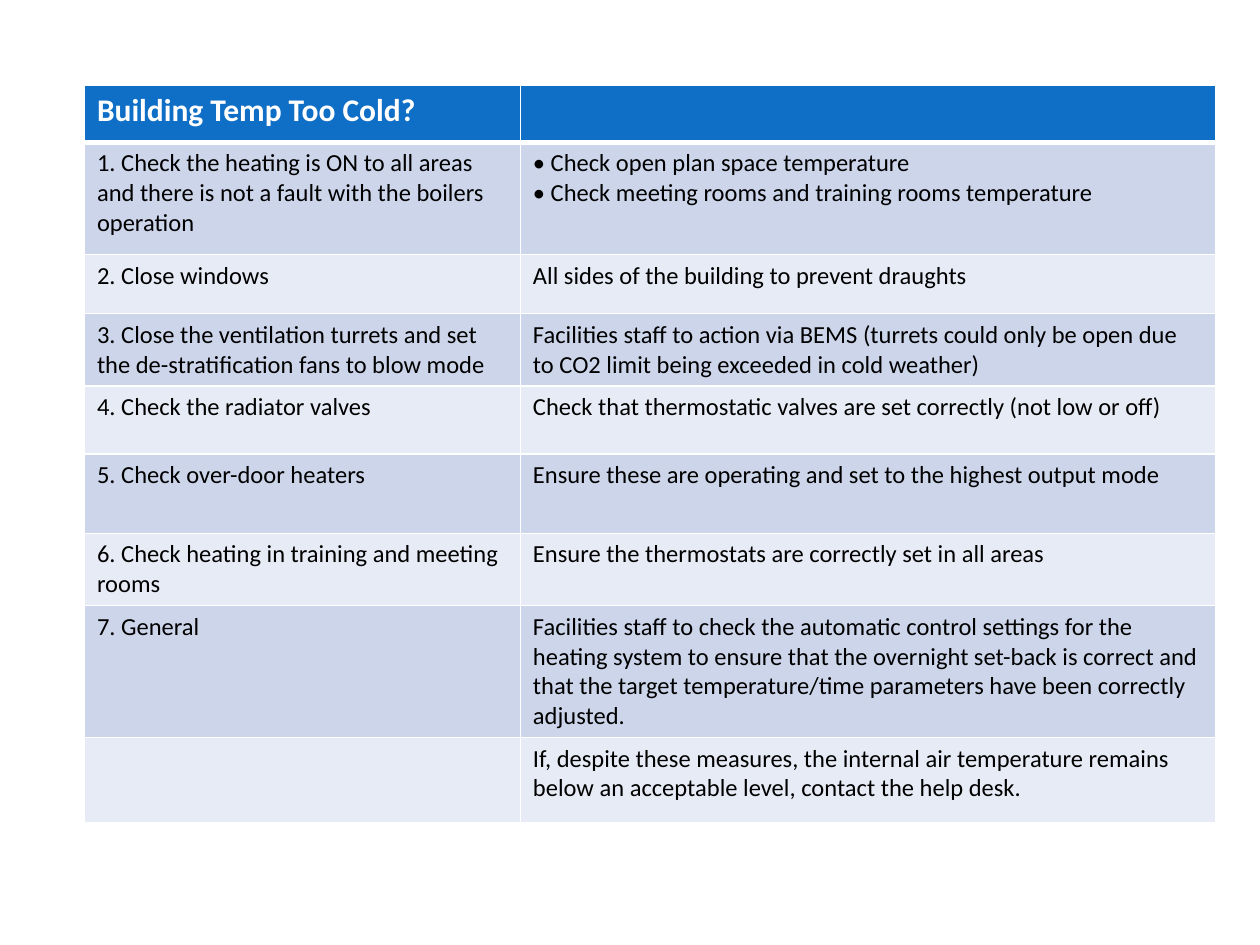
from pptx import Presentation
from pptx.dml.color import RGBColor
from pptx.oxml import parse_xml
from pptx.oxml.ns import nsdecls
from pptx.util import Inches, Pt

COLORS = {"header": "0F6FC6", "odd": "CCD5EA", "even": "E7EBF5",
          "white": "FFFFFF", "black": "000000"}
COLUMN_WIDTHS = [3.46, 5.52]
ROW_HEIGHTS = [0.45, 0.89, 0.47, 0.55, 0.54, 0.63, 0.4, 0.4, 0.68]
ROWS = [
    ("Building Temp Too Cold?", ""),
    ("1. Check the heating is ON to all areas and there is not a fault with the boilers operation",
     "• Check open plan space temperature\n• Check meeting rooms and training rooms temperature"),
    ("2. Close windows", "All sides of the building to prevent draughts"),
    ("3. Close the ventilation turrets and set the de-stratification fans to blow mode",
     "Facilities staff to action via BEMS (turrets could only be open due to CO2 limit "
     "being exceeded in cold weather)"),
    ("4. Check the radiator valves",
     "Check that thermostatic valves are set correctly (not low or off)"),
    ("5. Check over-door heaters",
     "Ensure these are operating and set to the highest output mode"),
    ("6. Check heating in training and meeting rooms",
     "Ensure the thermostats are correctly set in all areas"),
    ("7. General",
     "Facilities staff to check the automatic control settings for the heating system to ensure "
     "that the overnight set-back is correct and that the target temperature/time parameters "
     "have been correctly adjusted."),
    ("", "If, despite these measures, the internal air temperature remains below an acceptable "
         "level, contact the help desk."),
]


def write_text(text_frame, text, size=14, color="black", bold=False, font="Calibri"):
    text_frame.text = text
    for paragraph in text_frame.paragraphs:
        paragraph.font.size = Pt(size)
        for run in paragraph.runs:
            run.font.name = font
            run.font.size = Pt(size)
            run.font.bold = bold
            run.font.color.rgb = RGBColor.from_string(COLORS[color])


class SlideBuilder:
    """Hold the table style and the current slide."""

    def __init__(self, slide, border_width=1, header_border_width=3):
        self.slide = slide
        self.border_width = border_width
        self.header_border_width = header_border_width

    def add_borders(self, cell, row_index):
        properties = cell._tc.get_or_add_tcPr()
        for side in "LRTB":
            under_header = (row_index, side) in ((0, "B"), (1, "T"))
            width = self.header_border_width if under_header else self.border_width
            properties.append(parse_xml(
                f'<a:ln{side} {nsdecls("a")} w="{Pt(width)}"><a:solidFill>'
                f'<a:srgbClr val="{COLORS["white"]}"/></a:solidFill></a:ln{side}>'))

    def add_table(self, rows, left, top, column_widths, row_heights):
        table = self.slide.shapes.add_table(
            len(rows), len(column_widths), Inches(left), Inches(top),
            Inches(sum(column_widths)), Inches(sum(row_heights))).table
        for column, width in zip(table.columns, column_widths):
            column.width = Inches(width)
        for row_index, (texts, height) in enumerate(zip(rows, row_heights)):
            table.rows[row_index].height = Inches(height)
            is_header = row_index == 0
            fill = "header" if is_header else "odd" if row_index % 2 else "even"
            for column_index, text in enumerate(texts):
                cell = table.cell(row_index, column_index)
                self.add_borders(cell, row_index)
                cell.fill.solid()
                cell.fill.fore_color.rgb = RGBColor.from_string(COLORS[fill])
                write_text(cell.text_frame, text, size=18 if is_header else 14,
                           color="white" if is_header else "black", bold=is_header)


def main():
    presentation = Presentation()
    presentation.slide_width = Inches(10)
    presentation.slide_height = Inches(7.5)
    slide = presentation.slides.add_slide(presentation.slide_layouts[6])
    builder = SlideBuilder(slide)
    builder.add_table(ROWS, 0.67, 0.68, COLUMN_WIDTHS, ROW_HEIGHTS)
    presentation.save("out.pptx")


if __name__ == "__main__":
    main()
